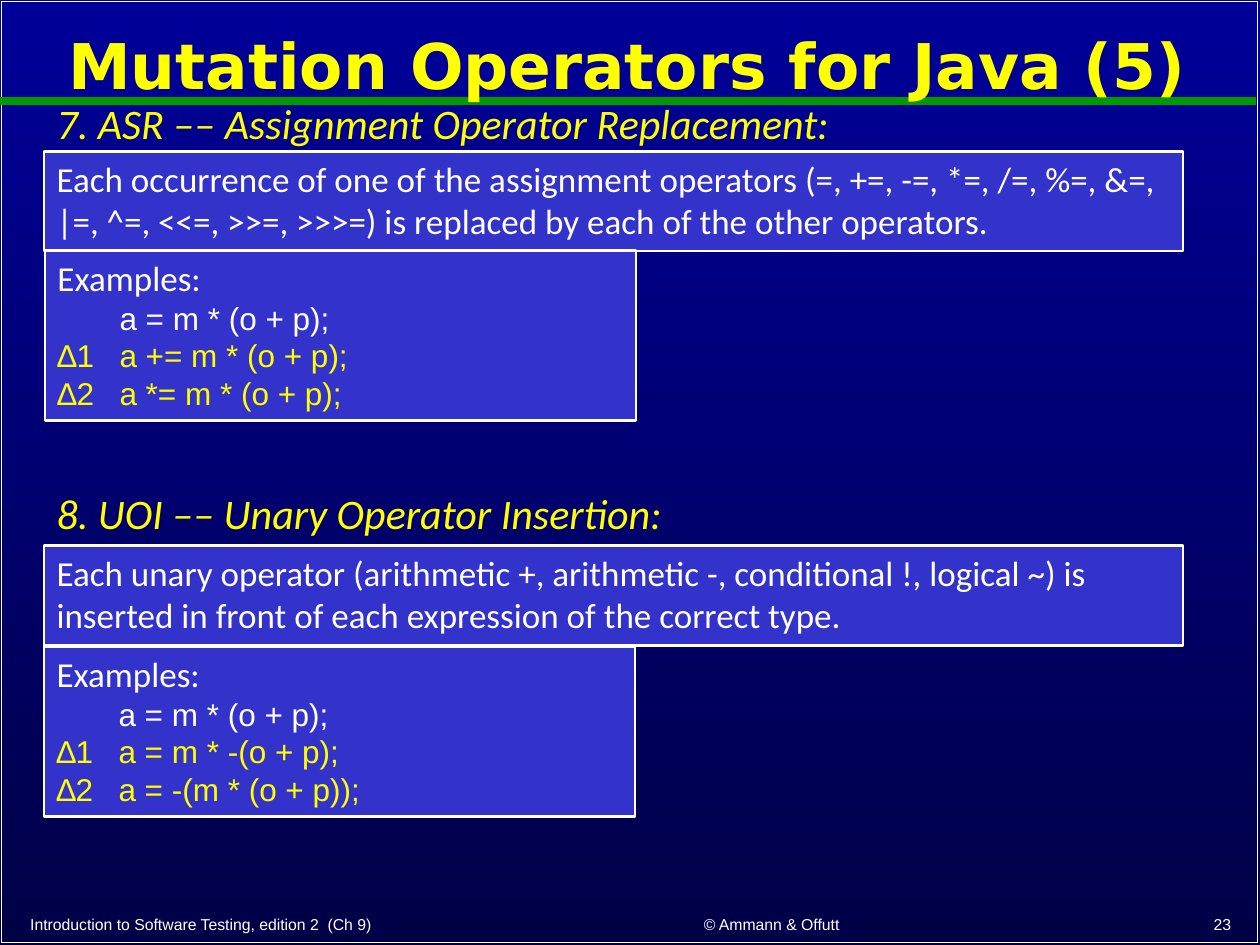
from lxml import etree
from pptx import Presentation
from pptx.dml.color import RGBColor
from pptx.enum.shapes import MSO_CONNECTOR, MSO_SHAPE
from pptx.enum.text import MSO_ANCHOR, MSO_AUTO_SIZE, PP_ALIGN
from pptx.oxml.ns import qn
from pptx.util import Cm, Pt

RECT = MSO_SHAPE.RECTANGLE
STRAIGHT = MSO_CONNECTOR.STRAIGHT
TOP, MID, LOW = MSO_ANCHOR.TOP, MSO_ANCHOR.MIDDLE, MSO_ANCHOR.BOTTOM
LEFT, CENTER, RIGHT = PP_ALIGN.LEFT, PP_ALIGN.CENTER, PP_ALIGN.RIGHT
GROW, FIXED = MSO_AUTO_SIZE.SHAPE_TO_FIT_TEXT, MSO_AUTO_SIZE.NONE

COLORS = {
    "top": "000099", "base": "000047", "rule": "009900", "box": "3333CC",
    "white": "FFFFFF", "yellow": "FFFF00", "dash": "FAFD00",
}
EDGE = 0.89      # left side of headings and boxes
WIDE = 22.96     # width of a definition box
HANG = 0.79      # hanging indent of a heading
CODE = 1.25      # indent of the code lines


def rgb(name):
    return RGBColor.from_string(COLORS[name])


def place(left, top, width, height):
    return Cm(left), Cm(top), Cm(width), Cm(height)


def add_run(para, text, size, color, font="Calibri", bold=False, italic=False):
    run = para.add_run()
    run.text = text
    face = run.font
    face.name, face.size = font, Pt(size)
    face.bold, face.italic = bold, italic
    face.color.rgb = rgb(color)


def indent(para, left, first):
    props = para._p.get_or_add_pPr()
    props.set("marL", str(Cm(left)))
    props.set("indent", str(Cm(first)))


def add_back(slide):
    fill = slide.background.fill
    fill.gradient()
    fill.gradient_angle = 270
    for stop, name, pos in zip(fill.gradient_stops, ("top", "base"), (0, 1)):
        stop.color.rgb = rgb(name)
        stop.position = pos


def add_rect(shapes, at, line, fill=None):
    rect = shapes.add_shape(RECT, *place(*at))
    rect.shadow.inherit = False
    if fill:
        rect.fill.solid()
        rect.fill.fore_color.rgb = rgb(fill)
    else:
        rect.fill.background()
    rect.line.color.rgb = rgb("white")
    rect.line.width = Pt(line)
    return rect


def add_rule(slide, y, width):
    rule = slide.shapes.add_connector(STRAIGHT, 0, Cm(y), Cm(width), Cm(y))
    rule.line.color.rgb = rgb("rule")
    rule.line.width = Pt(4.5)
    etree.SubElement(rule._element.spPr, qn("a:effectLst"))


def add_foot(slide, at, text, align):
    frame = slide.shapes.add_textbox(*place(*at)).text_frame
    frame.vertical_anchor = LOW
    para = frame.paragraphs[0]
    para.alignment = align
    add_run(para, text, 9, "white", "Arial")


def set_title(slide, text):
    title = slide.shapes.title
    title.left, title.top, title.width, title.height = place(0.03, 0.28, 25.22, 2.24)
    # Bring the title in front of the rule
    slide.shapes._spTree.append(title._element)
    frame = title.text_frame
    frame.vertical_anchor, frame.auto_size = MID, FIXED
    para = frame.paragraphs[0]
    para.alignment, para.line_spacing = CENTER, 0.9
    add_run(para, text, 36, "yellow", "DejaVu Sans", bold=True)


def add_head(shapes, top, width, label, name):
    frame = shapes.add_textbox(*place(EDGE, top, width, 1.5)).text_frame
    frame.word_wrap = True
    para = frame.paragraphs[0]
    indent(para, HANG, -HANG)
    for text, color in ((label, "yellow"), (" –– ", "dash"), (name, "yellow")):
        add_run(para, text, 24, color, italic=True)


def add_box(shapes, at):
    frame = add_rect(shapes, at, 1.5, "box").text_frame
    frame.word_wrap = True
    frame.vertical_anchor, frame.auto_size = TOP, GROW
    frame.paragraphs[0].alignment = LEFT
    return frame


def add_rules(slide, top, box_top, width, label, name, text):
    """Heading and definition of one operator, as a group."""
    shapes = slide.shapes.add_group_shape().shapes
    frame = add_box(shapes, (EDGE, box_top, WIDE, 2.01))
    add_run(frame.paragraphs[0], text, 20, "white")
    add_head(shapes, top, width, label, name)


def add_code(slide, left, top, code, mutants):
    frame = add_box(slide.shapes, (left, top, 11.91, 3.43))
    add_run(frame.paragraphs[0], "Examples:", 20, "white")
    lines = [(code, "white", 0)]
    lines += [(f"∆{n}\t{text}", "yellow", -CODE) for n, text in enumerate(mutants, 1)]
    for text, color, first in lines:
        para = frame.add_paragraph()
        para.alignment = LEFT
        indent(para, CODE, first)
        add_run(para, text, 18, color, "Arial")


def main():
    deck = Presentation()
    deck.slide_width, deck.slide_height = Cm(25.4), Cm(19.05)
    slide = deck.slides.add_slide(deck.slide_layouts[5])

    # Background, frame and rule
    add_back(slide)
    add_rect(slide.shapes, (0.03, 0.03, 25.32, 18.97), 1)
    add_rule(slide, 2.03, 25.32)

    # Footer
    add_foot(slide, (0.36, 18.24, 10.82, 0.71),
             "Introduction to Software Testing, edition 2  (Ch 9)", LEFT)
    add_foot(slide, (11.53, 18.22, 8.05, 0.73), "© Ammann & Offutt", CENTER)
    add_foot(slide, (20.02, 18.22, 5.05, 0.73), "23", RIGHT)

    set_title(slide, "Mutation Operators for Java (5)")

    # Operators and their definitions
    add_rules(slide, 1.85, 3.05, 24.03, "7. ASR", "Assignment Operator Replacement:",
              "Each occurrence of one of the assignment operators (=, +=, -=, *=, /=, "
              "%=, &=, |=, ^=, <<=, >>=, >>>=) is replaced by each of the other operators.")
    add_rules(slide, 9.7, 11, 21.97, "8. UOI", "Unary Operator Insertion:",
              "Each unary operator (arithmetic +, arithmetic -, conditional !, logical ~) "
              "is inserted in front of each expression of the correct type.")

    # Examples
    code = "a = m * (o + p);"
    add_code(slide, 0.91, 5.05, code, ("a += m * (o + p);", "a *= m * (o + p);"))
    add_code(slide, EDGE, 13.03, code, ("a = m * -(o + p);", "a = -(m * (o + p));"))

    deck.save("out.pptx")


if __name__ == "__main__":
    main()
